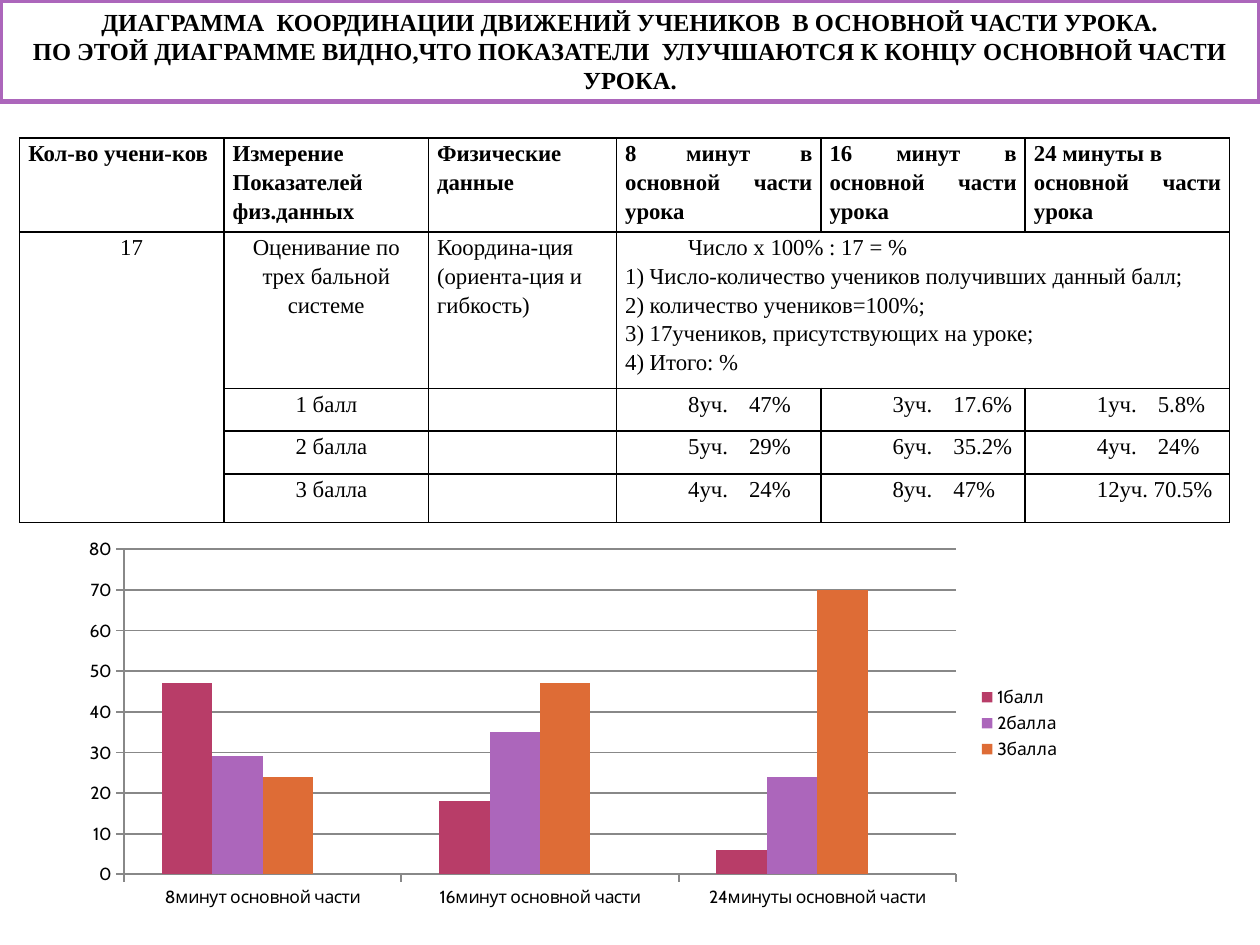
"""Build a slide on movement coordination: heading, score table and column chart."""
from pptx import Presentation
from pptx.chart.data import CategoryChartData
from pptx.dml.color import RGBColor
from pptx.enum.chart import XL_CHART_TYPE, XL_LEGEND_POSITION, XL_TICK_MARK
from pptx.enum.shapes import MSO_SHAPE
from pptx.enum.text import MSO_ANCHOR, PP_ALIGN
from pptx.oxml import parse_xml
from pptx.oxml.ns import nsdecls
from pptx.util import Pt

LEFT, CENTER, JUSTIFY = PP_ALIGN.LEFT, PP_ALIGN.CENTER, PP_ALIGN.JUSTIFY
MIDDLE, RECTANGLE = MSO_ANCHOR.MIDDLE, MSO_SHAPE.RECTANGLE
CLUSTERED, OUTSIDE = XL_CHART_TYPE.COLUMN_CLUSTERED, XL_TICK_MARK.OUTSIDE
LEGEND_RIGHT = XL_LEGEND_POSITION.RIGHT
COLORS = {
    "paper": "FFFFFF", "ink": "000000", "frame": "AC66BB", "axis": "888888",
    "score 1": "B83D68", "score 2": "AC66BB", "score 3": "DE6C36", "spare": "F9B639",
}
SERIF, SANS = "Times New Roman", "Cabin"

HEADING = [
    "ДИАГРАММА  КООРДИНАЦИИ ДВИЖЕНИЙ УЧЕНИКОВ  В ОСНОВНОЙ ЧАСТИ УРОКА.",
    "ПО ЭТОЙ ДИАГРАММЕ ВИДНО,ЧТО ПОКАЗАТЕЛИ  УЛУЧШАЮТСЯ К КОНЦУ ОСНОВНОЙ ЧАСТИ УРОКА.",
]
COLUMN_HEADS = [
    ["Кол-во учени-ков"],
    ["Измерение", "Показателей физ.данных"],
    ["Физические данные"],
    ["8 минут в основной части урока"],
    ["16 минут в основной части урока"],
    ["24 минуты в", "основной части урока"],
]
PUPIL_COUNT = "17"
METHOD = "Оценивание по трех бальной системе"
QUALITY = "Координа-ция (ориента-ция и гибкость)"
FORMULA = [
    "Число х 100% : 17 = %",
    "1) Число-количество учеников получивших данный балл;",
    "2) количество учеников=100%;",
    "3) 17учеников, присутствующих на уроке;",
    "4) Итого: %",
]
SCORES = [
    ["1 балл", "", "8уч.\t47%", "3уч.\t17.6%", "1уч.\t5.8%"],
    ["2 балла", "", "5уч.\t29%", "6уч.\t35.2%", "4уч.\t24%"],
    ["3 балла", "", "4уч.\t24%", "8уч.\t47%", "12уч. 70.5%"],
]
COLUMN_WIDTHS = [116.8, 116.8, 107.5, 116.8, 116.8, 116.8]
ROW_HEIGHTS = [53.7, 89.5, 24.4, 24.4, 28]
SCORE_INDENT, COUNT_INDENT = 36, 52.5

STAGES = ["8минут основной части", "16минут основной части", "24минуты основной части"]
SERIES = [
    ("1балл", [47, 18, 6], "score 1"),
    ("2балла", [29, 35, 24], "score 2"),
    ("3балла", [24, 47, 70], "score 3"),
    ("Series 4", [None, None, None], "spare"),
]


def rgb(name):
    return RGBColor.from_string(COLORS[name])


def style_font(font, face, size, bold=False):
    font.name, font.size, font.bold = face, Pt(size), bold
    font.color.rgb = rgb("ink")


def add_heading(slide):
    box = slide.shapes.add_shape(RECTANGLE, 0, 0, Pt(720), Pt(58))
    box.shadow.inherit = False
    box.fill.solid()
    box.fill.fore_color.rgb = rgb("paper")
    box.line.color.rgb = rgb("frame")
    box.line.width = Pt(3)
    frame = box.text_frame
    frame.word_wrap = True
    frame.vertical_anchor = MIDDLE
    frame.text = "\n".join(HEADING)
    for paragraph in frame.paragraphs:
        paragraph.alignment = CENTER
        style_font(paragraph.font, SERIF, 14, True)


def indent(paragraph, left):
    properties = paragraph._p.get_or_add_pPr()
    properties.set("marL", str(Pt(left)))
    properties.set("indent", "0")


def fill_cell(cell, lines, align=LEFT, bold=False):
    cell.text = "\n".join(lines)
    for paragraph in cell.text_frame.paragraphs:
        paragraph.alignment = align
        paragraph.line_spacing = 1.15
        style_font(paragraph.font, SERIF, 13, bold)
    return cell.text_frame.paragraphs[0]


def finish_cell(cell):
    cell.margin_left = cell.margin_right = Pt(5)
    cell.margin_top = cell.margin_bottom = 0
    properties = cell._tc.get_or_add_tcPr()
    for side in "LRTB":
        properties.append(parse_xml(
            f'<a:ln{side} {nsdecls("a")} w="{Pt(1)}"><a:solidFill>'
            f'<a:srgbClr val="{COLORS["ink"]}"/></a:solidFill></a:ln{side}>'))
    cell.fill.background()


def add_score_table(slide):
    table = slide.shapes.add_table(
        len(ROW_HEIGHTS), len(COLUMN_WIDTHS), Pt(11.2), Pt(78.8),
        Pt(sum(COLUMN_WIDTHS)), Pt(sum(ROW_HEIGHTS))).table
    table.first_row = table.horz_banding = False
    for column, width in zip(table.columns, COLUMN_WIDTHS):
        column.width = Pt(width)
    for row, height in zip(table.rows, ROW_HEIGHTS):
        row.height = Pt(height)
    table.cell(1, 0).merge(table.cell(4, 0))
    table.cell(1, 3).merge(table.cell(1, 5))
    for cell in table.iter_cells():
        finish_cell(cell)
    for column, lines in enumerate(COLUMN_HEADS):
        fill_cell(table.cell(0, column), lines, JUSTIFY, True)
    indent(fill_cell(table.cell(1, 0), [PUPIL_COUNT]), COUNT_INDENT)
    fill_cell(table.cell(1, 1), [METHOD], CENTER)
    fill_cell(table.cell(1, 2), [QUALITY])
    indent(fill_cell(table.cell(1, 3), FORMULA), SCORE_INDENT)
    for row, scores in enumerate(SCORES, 2):
        for column, score in enumerate(scores, 1):
            indent(fill_cell(table.cell(row, column), [score]), SCORE_INDENT)


def add_score_chart(slide):
    data = CategoryChartData()
    data.categories = STAGES
    for name, values, _ in SERIES:
        data.add_series(name, values)
    chart = slide.shapes.add_chart(
        CLUSTERED, Pt(39.3), Pt(303.5), Pt(573.8), Pt(219.6), data).chart
    chart.has_title = False
    style_font(chart.font, SANS, 10)
    plot = chart.plots[0]
    plot.vary_by_categories = False
    plot.gap_width = 150
    for series, (_, _, color) in zip(plot.series, SERIES):
        series.format.fill.solid()
        series.format.fill.fore_color.rgb = rgb(color)
    values, stages = chart.value_axis, chart.category_axis
    values.minimum_scale, values.maximum_scale, values.major_unit = 0, 80, 10
    values.has_major_gridlines = True
    for part in (values, stages, values.major_gridlines):
        part.format.line.color.rgb = rgb("axis")
        part.format.line.width = Pt(1)
    values.major_tick_mark = stages.major_tick_mark = OUTSIDE
    chart.has_legend = True
    legend = chart.legend
    legend.position = LEGEND_RIGHT
    legend.include_in_layout = False
    legend._element.insert(1, parse_xml(
        f'<c:legendEntry {nsdecls("c")}><c:idx val="{len(SERIES) - 1}"/>'
        '<c:delete val="1"/></c:legendEntry>'))


def main():
    deck = Presentation()
    deck.slide_width, deck.slide_height = Pt(720), Pt(540)
    slide = deck.slides.add_slide(deck.slide_layouts[6])
    add_score_table(slide)
    add_heading(slide)
    add_score_chart(slide)
    deck.save("out.pptx")


if __name__ == "__main__":
    main()
